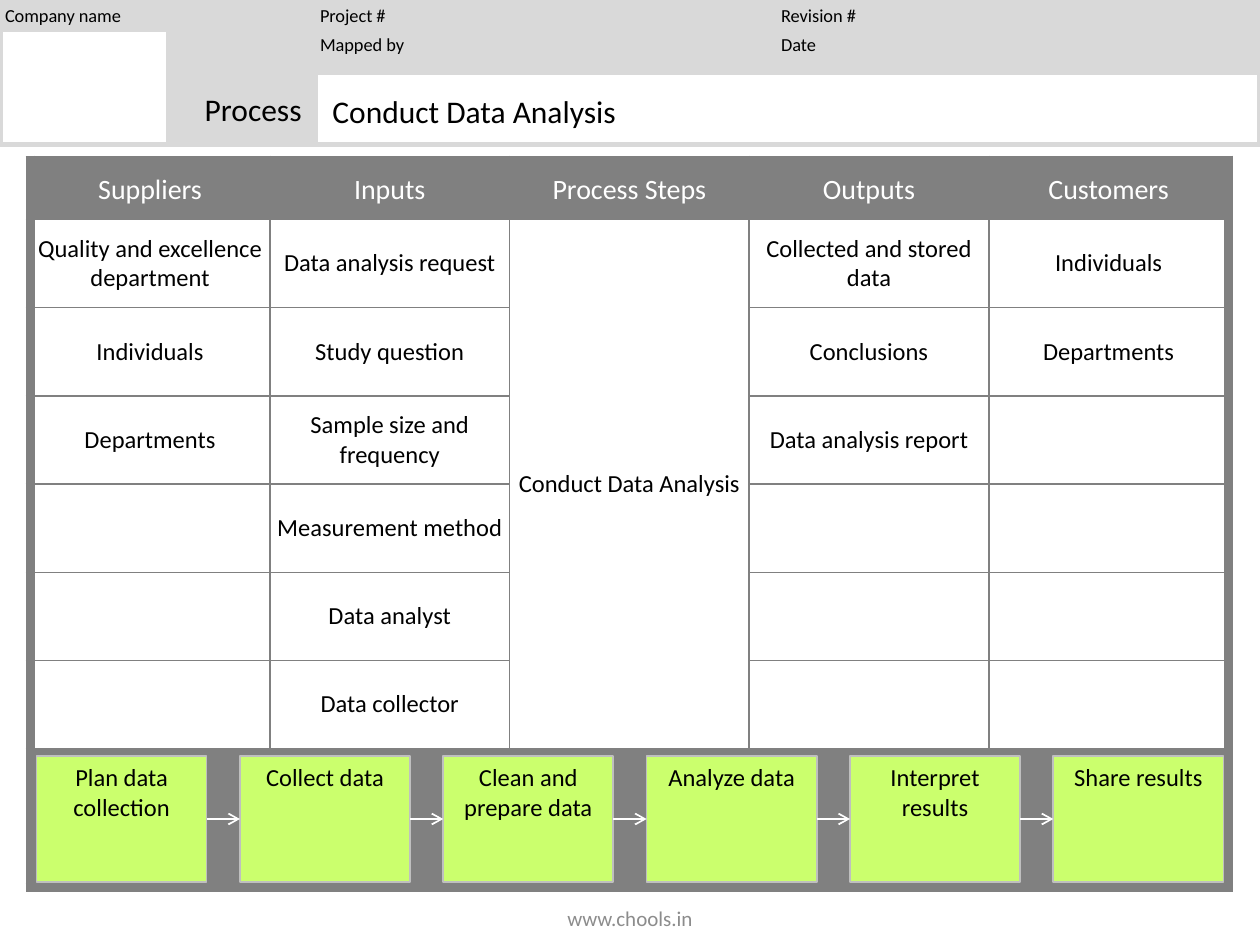
import itertools
from dataclasses import dataclass

import pptx
import pptx.dml.color
import pptx.enum.shapes
import pptx.enum.text
import pptx.oxml
import pptx.oxml.ns
import pptx.util

Pt = pptx.util.Pt
ALIGN = pptx.enum.text.PP_ALIGN
ANCHOR = pptx.enum.text.MSO_ANCHOR
SHAPES = pptx.enum.shapes


@dataclass(frozen=True)
class Theme:
    font: str = "Calibri"
    black: str = "000000"
    white: str = "FFFFFF"
    band: str = "D9D9D9"
    grid: str = "808080"
    step: str = "CBFF6D"
    step_line: str = "BFBFBF"
    footer: str = "8C8C8C"
    label_size: float = 10.5
    title_size: float = 18
    heading_size: float = 16
    body_size: float = 14
    footer_size: float = 12


THEME = Theme()

LABELS = [
    ("Company name", 0, 0),
    ("Project #", 180, 0),
    ("Revision #", 443.5, 0),
    ("Mapped by", 180, 17),
    ("Date", 443.5, 17),
]

SIPOC = [
    ["Suppliers", "Inputs", "Process Steps", "Outputs", "Customers"],
    ["Quality and excellence department", "Data analysis request",
     "Conduct Data Analysis", "Collected and stored data", "Individuals"],
    ["Individuals", "Study question", "", "Conclusions", "Departments"],
    ["Departments", "Sample size and frequency", "", "Data analysis report", ""],
    ["", "Measurement method", "", "", ""],
    ["", "Data analyst", "", "", ""],
    ["", "Data collector", "", "", ""],
    ["", "", "", "", ""],
]
ROW_HEIGHTS = [33.84] + [50.4] * 6 + [79.2]
COLUMN_WIDTH = 136.95

STEPS = ["Plan data collection", "Collect data", "Clean and prepare data",
         "Analyze data", "Interpret results", "Share results"]


def rgb(value):
    return pptx.dml.color.RGBColor.from_string(value)


def apply(target, values):
    for name, value in values.items():
        setattr(target, name, value)


def write(frame, text, size, color=THEME.black, align=ALIGN.LEFT):
    paragraph = frame.paragraphs[0]
    paragraph.alignment = align
    run = paragraph.add_run()
    run.text = text
    apply(run.font, {"name": THEME.font, "size": Pt(size)})
    run.font.color.rgb = rgb(color)


def add_box(slide, box, fill, line, line_width):
    shape = slide.shapes.add_shape(SHAPES.MSO_SHAPE.RECTANGLE, *map(Pt, box))
    shape.shadow.inherit = False
    shape.fill.solid()
    shape.fill.fore_color.rgb = rgb(fill)
    shape.line.color.rgb = rgb(line)
    shape.line.width = Pt(line_width)
    return shape


def add_text(slide, box, text, size, color=THEME.black, align=ALIGN.LEFT, **frame_format):
    frame = slide.shapes.add_textbox(*map(Pt, box)).text_frame
    apply(frame, {"word_wrap": True, **frame_format})
    write(frame, text, size, color, align)


def add_arrow(slide, start, end):
    arrow = slide.shapes.add_connector(SHAPES.MSO_CONNECTOR.STRAIGHT, 0, 0, 0, 0)
    arrow.begin_connect(start, 3)
    arrow.end_connect(end, 1)
    arrow.line.color.rgb = rgb(THEME.white)
    arrow.line.width = Pt(1)
    tail = pptx.oxml.parse_xml(
        f'<a:tailEnd {pptx.oxml.ns.nsdecls("a")} type="arrow"/>')
    arrow.line._get_or_add_ln().append(tail)
    arrow._element.spPr.append(
        pptx.oxml.parse_xml(f'<a:effectLst {pptx.oxml.ns.nsdecls("a")}/>'))


def set_borders(cell, widths):
    properties = cell._tc.get_or_add_tcPr()
    for side, width in widths.items():
        properties.append(pptx.oxml.parse_xml(
            f'<a:ln{side} {pptx.oxml.ns.nsdecls("a")} w="{Pt(width)}"><a:solidFill>'
            f'<a:srgbClr val="{THEME.grid}"/></a:solidFill></a:ln{side}>'))


def add_header(slide):
    # Grey band with the project labels
    def panel(box, fill):
        return add_box(slide, box, fill, THEME.band, 3)

    process = panel((65.5, 41.5, 114, 41.3), THEME.band)
    process.text_frame.vertical_anchor = ANCHOR.MIDDLE
    write(process.text_frame, "Process", THEME.title_size, align=ALIGN.RIGHT)
    panel((0, 0, 720, 41), THEME.band)
    panel((0, 16.8, 96.5, 65.8), THEME.white)
    panel((180, 41.5, 540, 41.3), THEME.white)

    margins = {"margin_left": Pt(2.88), "margin_right": Pt(2.88),
               "margin_top": Pt(1.44), "margin_bottom": Pt(1.44)}
    for text, left, top in LABELS:
        add_text(slide, (left, top, 180, 16.8), text, THEME.label_size,
                 vertical_anchor=ANCHOR.MIDDLE, **margins)
    # Process name
    add_text(slide, (182.9, 49, 529, 29), "Conduct Data Analysis", THEME.title_size)


def add_sipoc_table(slide):
    last_row, last_column = len(SIPOC) - 1, len(SIPOC[0]) - 1
    table = slide.shapes.add_table(
        last_row + 1, last_column + 1, Pt(17.28), Pt(91.6),
        Pt(COLUMN_WIDTH * (last_column + 1)), Pt(sum(ROW_HEIGHTS))).table
    apply(table, {"first_row": False, "horz_banding": False})
    for column in table.columns:
        column.width = Pt(COLUMN_WIDTH)
    for row, height in zip(table.rows, ROW_HEIGHTS):
        row.height = Pt(height)

    for r, c in itertools.product(range(last_row + 1), range(last_column + 1)):
        cell = table.cell(r, c)
        apply(cell, {"margin_left": 0, "margin_right": 0, "margin_top": 0,
                     "margin_bottom": 0, "vertical_anchor": ANCHOR.MIDDLE})
        # Heavy lines on the outer edge, thin lines inside
        set_borders(cell, {"L": 6 if c == 0 else 1,
                           "R": 6 if c == last_column else 1,
                           "T": 6 if r == 0 else 1,
                           "B": 6 if r == last_row else 1})
        cell.fill.solid()
        cell.fill.fore_color.rgb = rgb(
            THEME.grid if r in (0, last_row) else THEME.white)
        if SIPOC[r][c]:
            size, color = ((THEME.heading_size, THEME.white) if r == 0
                           else (THEME.body_size, THEME.black))
            write(cell.text_frame, SIPOC[r][c], size, color, ALIGN.CENTER)
    table.cell(1, 2).merge(table.cell(last_row - 1, 2))


def add_steps(slide):
    # Evenly spaced boxes over the bottom row of the table
    boxes = []
    for index, text in enumerate(STEPS):
        box = add_box(slide, (20.9 + index * 116.2, 432, 97.2, 72),
                      THEME.step, THEME.step_line, 1)
        apply(box.text_frame, {"vertical_anchor": ANCHOR.TOP, "word_wrap": True})
        write(box.text_frame, text, THEME.body_size, align=ALIGN.CENTER)
        boxes.append(box)
    for start, end in itertools.pairwise(boxes):
        add_arrow(slide, start, end)


def main():
    presentation = pptx.Presentation()
    apply(presentation, {"slide_width": Pt(720), "slide_height": Pt(540)})
    slide = presentation.slides.add_slide(presentation.slide_layouts[6])
    add_header(slide)
    add_sipoc_table(slide)
    add_steps(slide)
    # Footer
    add_text(slide, (238.5, 510.5, 243, 28.8), "www.chools.in", THEME.footer_size,
             THEME.footer, ALIGN.CENTER, vertical_anchor=ANCHOR.MIDDLE)
    presentation.save("out.pptx")


if __name__ == "__main__":
    main()
